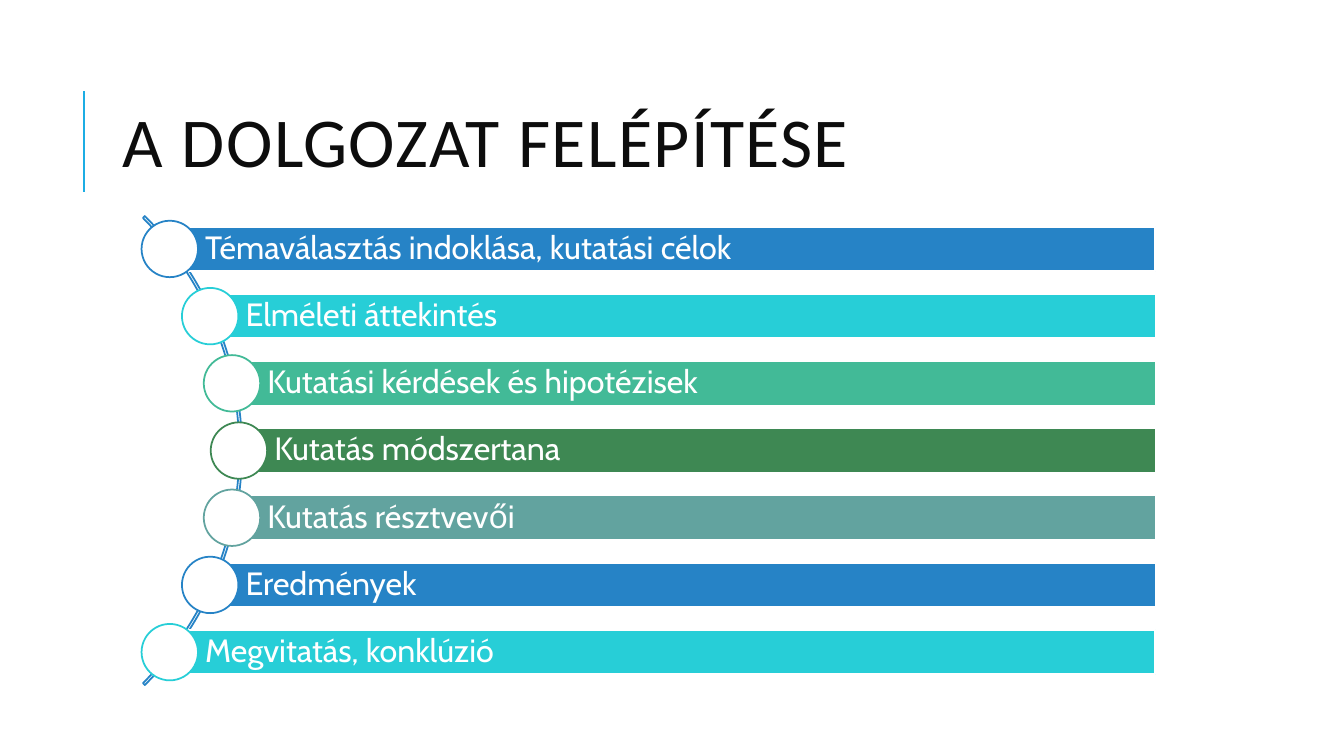
from math import sqrt
from pptx import Presentation
from pptx.dml.color import RGBColor
from pptx.enum.shapes import MSO_CONNECTOR, MSO_SHAPE
from pptx.enum.text import MSO_ANCHOR, PP_ALIGN
from pptx.oxml.ns import qn
from pptx.util import Inches, Pt
from lxml import etree


def rgb(value):
    return RGBColor.from_string(value)


def add_outlined(kind, x, y, w, h, fill, line):
    sp = s.shapes.add_shape(kind, Inches(x), Inches(y), Inches(w), Inches(h))
    sp.shadow.inherit = False
    if fill:
        sp.fill.solid()
        sp.fill.fore_color.rgb = rgb(fill)
    else:
        sp.fill.background()
    sp.line.color.rgb = rgb(line)
    sp.line.width = Pt(1.25)
    return sp


prs = Presentation()
prs.slide_width = Inches(13.33)
prs.slide_height = Inches(7.5)
s = prs.slides.add_slide(prs.slide_layouts[6])

rule = s.shapes.add_connector(MSO_CONNECTOR.STRAIGHT, Inches(0.83), Inches(1.9), Inches(0.83), Inches(0.9))
rule.line.color.rgb = rgb("1CADE4")
rule.line.width = Pt(1.5)
etree.SubElement(rule._element.spPr, qn("a:effectLst"))

title = s.shapes.add_textbox(Inches(1.12), Inches(0.64), Inches(10.63), Inches(1.64))
tf = title.text_frame
tf.word_wrap = True
tf.vertical_anchor = MSO_ANCHOR.MIDDLE
p = tf.paragraphs[0]
p.line_spacing = 0.8
r = p.add_run()
r.text = "A DOLGOZAT FELÉPÍTÉSE"
r.font.size = Pt(50)
r.font.name = "Calibri"
r.font.color.rgb = rgb("0D0D0D")
r.font._element.set("spc", "100")

arc = add_outlined(MSO_SHAPE.BLOCK_ARC, -4.18, 1.18, 6.58, 6.58, None, "2683C6")
arc.adjustments[0] = 189
arc.adjustments[1] = 27
arc.adjustments[2] = 0.004

chapters = [
    ("Témaválasztás indoklása, kutatási célok", "2683C6"),
    ("Elméleti áttekintés", "27CED7"),
    ("Kutatási kérdések és hipotézisek", "42BA97"),
    ("Kutatás módszertana", "3E8853"),
    ("Kutatás résztvevői", "62A39F"),
    ("Eredmények", "2683C6"),
    ("Megvitatás, konklúzió", "27CED7"),
]
arc_x, arc_y, radius = -0.89, 4.47, 3.26
right, bar_h, dot = 11.46, 0.44, 0.56

for i, (text, color) in enumerate(chapters):
    dy = (i - 3) * 2 / 3
    x = arc_x + sqrt(radius ** 2 - dy ** 2)
    y = arc_y + dy
    bar = add_outlined(MSO_SHAPE.RECTANGLE, x, y - bar_h / 2, right - x, bar_h, color, "FFFFFF")
    tf = bar.text_frame
    tf.word_wrap = True
    tf.vertical_anchor = MSO_ANCHOR.MIDDLE
    tf.margin_left = Inches(0.35)
    tf.margin_top = tf.margin_right = tf.margin_bottom = Inches(0.06)
    p = tf.paragraphs[0]
    p.text = text
    p.alignment = PP_ALIGN.LEFT
    p.line_spacing = 0.9
    p.font.size = Pt(23)
    p.font.name = "Cabin"
    p.font.color.rgb = rgb("FFFFFF")
    add_outlined(MSO_SHAPE.OVAL, x - dot / 2, y - dot / 2, dot, dot, "FFFFFF", color)

prs.save("out.pptx")
